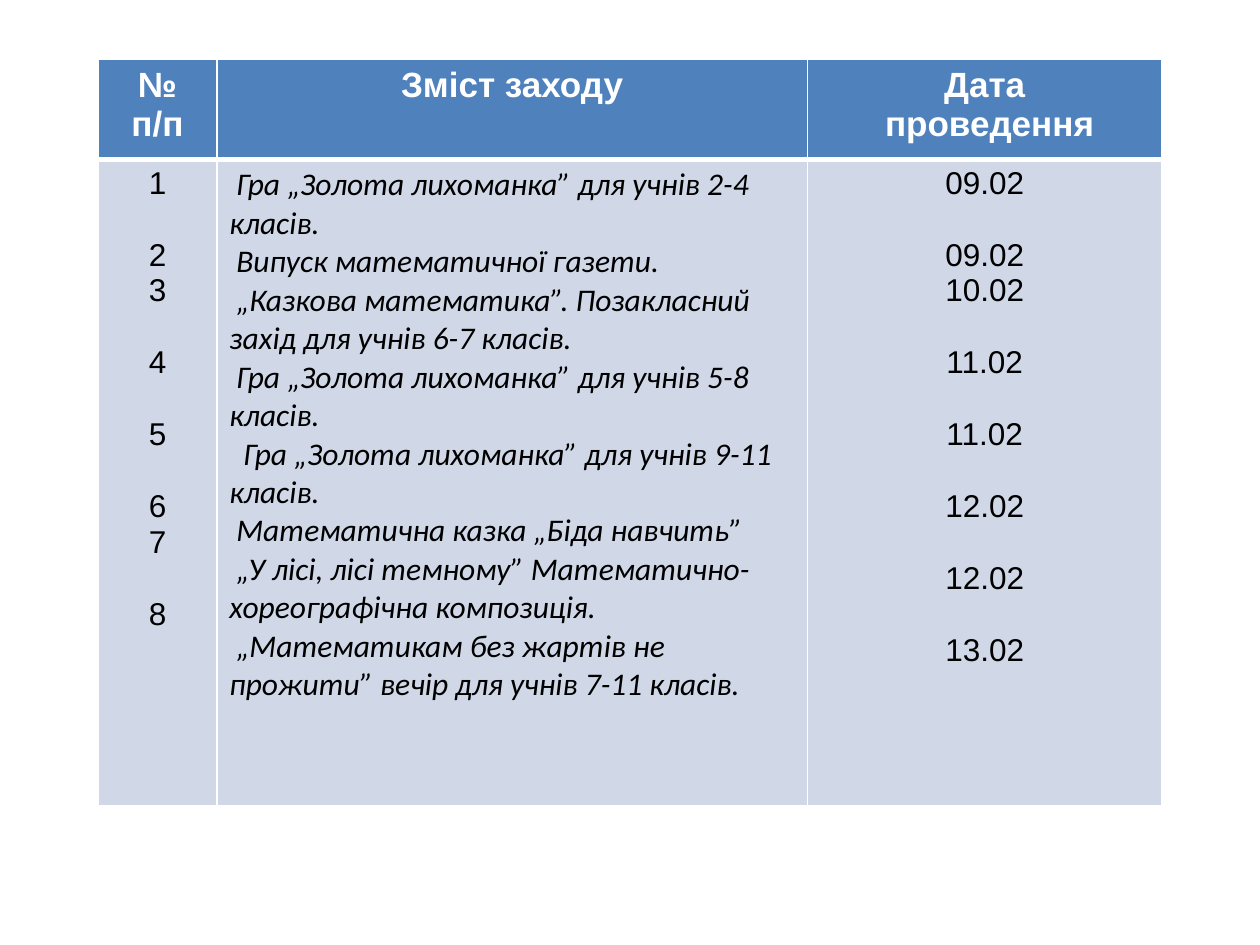
import pptx
import pptx.dml.color
import pptx.enum.text
import pptx.oxml
import pptx.oxml.ns
import pptx.util

Cm, Pt = pptx.util.Cm, pptx.util.Pt
CENTER = pptx.enum.text.PP_ALIGN.CENTER
LEFT = pptx.enum.text.PP_ALIGN.LEFT

WHITE, BLACK, HEADER_BLUE, BODY_BLUE = "FFFFFF", "000000", "4F81BD", "D0D8E8"
COLUMN_WIDTHS = [2.39, 11.91, 7.14]
ROW_HEIGHTS = [2.03, 13.03]
LINE_GAP = Pt(21)

HEADER_FONT = {"name": "Arial", "size": Pt(20), "bold": True, "italic": False}
BODY_FONT = {"name": "Arial", "size": Pt(18), "bold": False, "italic": False}
EVENT_FONT = {**BODY_FONT, "name": "Calibri", "italic": True}

HEADINGS = [["№", "п/п"], ["Зміст заходу"], ["Дата", "проведення"]]
NUMBERS = ["1", "2", "3", "4", "5", "6", "7", "8"]
NUMBERS_AFTER_GAP = {1, 3, 4, 5, 7}
EVENTS = [
    "Гра „Золота лихоманка” для учнів 2-4 класів.",
    "Випуск математичної газети.",
    "„Казкова математика”. Позакласний захід для учнів 6-7 класів.",
    "Гра „Золота лихоманка” для учнів 5-8 класів.",
    "Гра „Золота лихоманка” для учнів 9-11 класів.",
    "Математична казка „Біда навчить”",
    "„У лісі, лісі темному” Математично-хореографічна композиція.",
    "„Математикам без жартів не прожити” вечір для учнів 7-11 класів.",
]
DEEPER_EVENT = 4
DATES = ["09.02", "09.02", "10.02", "11.02", "11.02", "12.02", "12.02", "13.02"]
DATES_AFTER_GAP = {1, 3, 4, 5, 6, 7}


def rgb(value):
    return pptx.dml.color.RGBColor.from_string(value)


def write_lines(cell, lines, font_format, color, alignment=CENTER, after_gap=()):
    """Write one paragraph per line; indexes in after_gap get a line's space before."""
    frame = cell.text_frame
    for index, line in enumerate(lines):
        paragraph = frame.add_paragraph() if index else frame.paragraphs[0]
        paragraph.alignment = alignment
        if index in after_gap:
            paragraph.space_before = LINE_GAP
        run = paragraph.add_run()
        run.text = line
        for attribute, value in font_format.items():
            setattr(run.font, attribute, value)
        run.font.color.rgb = rgb(color)
    return frame.paragraphs


def indent(paragraph, attribute, length):
    paragraph._p.get_or_add_pPr().set(attribute, str(int(length)))


def style_cell(cell, fill, top, bottom):
    """Fill the cell and draw white borders, with top and bottom widths in points."""
    cell.fill.solid()
    cell.fill.fore_color.rgb = rgb(fill)
    borders = {"lnL": 1, "lnR": 1, "lnT": top, "lnB": bottom}
    for position, (side, width) in enumerate(borders.items()):
        border = pptx.oxml.parse_xml(
            f'<a:{side} {pptx.oxml.ns.nsdecls("a")} w="{int(Pt(width))}">'
            f'<a:solidFill><a:srgbClr val="{WHITE}"/></a:solidFill></a:{side}>'
        )
        cell._tc.get_or_add_tcPr().insert(position, border)


def add_schedule(slide):
    schedule = slide.shapes.add_table(
        2, 3, Cm(1.98), Cm(1.19), Cm(sum(COLUMN_WIDTHS)), Cm(sum(ROW_HEIGHTS))
    ).table
    schedule.horz_banding = False
    for column, width in zip(schedule.columns, COLUMN_WIDTHS):
        column.width = Cm(width)
    for row, height in zip(schedule.rows, ROW_HEIGHTS):
        row.height = Cm(height)
    for column in range(len(COLUMN_WIDTHS)):
        style_cell(schedule.cell(0, column), HEADER_BLUE, top=1, bottom=3)
        style_cell(schedule.cell(1, column), BODY_BLUE, top=3, bottom=1)
    return schedule


def fill_header(schedule):
    for column, heading in enumerate(HEADINGS):
        lines = write_lines(schedule.cell(0, column), heading, HEADER_FONT, WHITE)
    indent(lines[-1], "marL", Cm(0.2))


def fill_body(schedule):
    numbers, events, dates = (schedule.cell(1, column) for column in range(3))
    write_lines(numbers, NUMBERS, BODY_FONT, BLACK, after_gap=NUMBERS_AFTER_GAP)
    event_lines = write_lines(events, EVENTS, EVENT_FONT, BLACK, LEFT)
    for index, line in enumerate(event_lines):
        indent(line, "indent", Cm(0.28 if index == DEEPER_EVENT else 0.14))
    write_lines(dates, DATES, BODY_FONT, BLACK, after_gap=DATES_AFTER_GAP)


def main():
    presentation = pptx.Presentation()
    presentation.slide_width = Cm(25.4)
    presentation.slide_height = Cm(19.05)
    slide = presentation.slides.add_slide(presentation.slide_layouts[6])
    schedule = add_schedule(slide)
    fill_header(schedule)
    fill_body(schedule)
    presentation.save("out.pptx")


if __name__ == "__main__":
    main()
